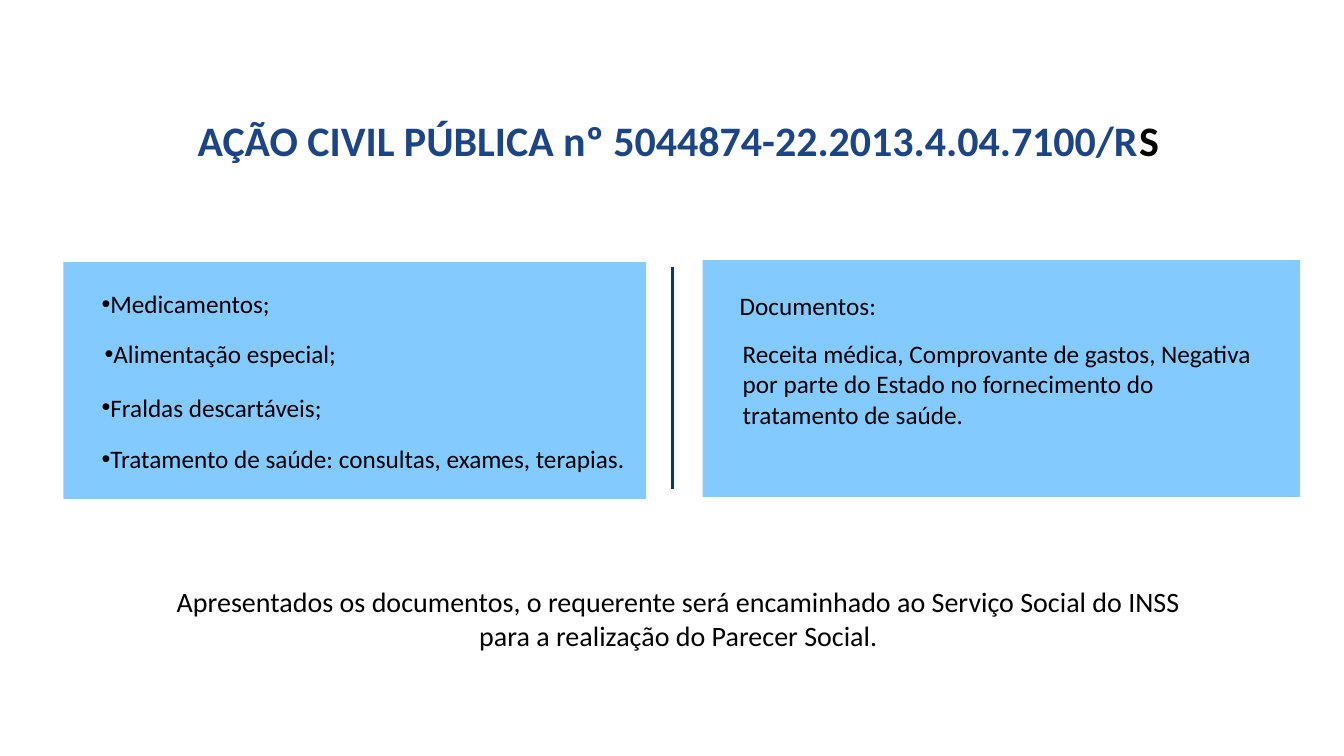
"""Build the slide on the documents required by the public civil action."""
from dataclasses import dataclass

from lxml.etree import SubElement
from pptx import Presentation
from pptx.dml.color import RGBColor
from pptx.enum.shapes import MSO_CONNECTOR, MSO_SHAPE
from pptx.enum.text import MSO_ANCHOR, PP_ALIGN
from pptx.oxml.ns import qn
from pptx.slide import Slide
from pptx.util import Pt

BLACK = RGBColor(0x00, 0x00, 0x00)
TITLE_BLUE = RGBColor(0x1C, 0x45, 0x87)
PANEL_BLUE = RGBColor(0x83, 0xCA, 0xFF)
DIVIDER_BLUE = RGBColor(0x00, 0x3F, 0x6A)
FONT_NAME = "Calibri"


@dataclass(frozen=True)
class Area:
    """Place and size in points."""
    left: float
    top: float
    width: float
    height: float


@dataclass(frozen=True)
class Span:
    """Run of text with its colour."""
    text: str
    color: RGBColor = BLACK


@dataclass(frozen=True)
class TextBlock:
    """Text box holding one paragraph."""
    area: Area
    spans: tuple[Span, ...]
    size: float = 18
    bold: bool = False
    bullet: bool = False
    align: PP_ALIGN = PP_ALIGN.LEFT
    anchor: MSO_ANCHOR = MSO_ANCHOR.TOP


PANELS = (Area(45.36, 187.2, 416.16, 169.2), Area(501.84, 185.76, 426.96, 169.2))

BENEFITS = (
    (65.52, 202.32, "Medicamentos;"),
    (67.68, 238.32, "Alimentação especial;"),
    (65.52, 276.48, "Fraldas descartáveis;"),
    (65.52, 313.2, "Tratamento de saúde: consultas, exames, terapias."),
)

TEXT_BLOCKS = (
    TextBlock(
        Area(65.52, 78.48, 838.08, 43.2),
        (Span("AÇÃO CIVIL PÚBLICA nº 5044874-22.2013.4.04.7100/R", TITLE_BLUE), Span("S")),
        size=30, bold=True, align=PP_ALIGN.CENTER, anchor=MSO_ANCHOR.MIDDLE,
    ),
    *(
        TextBlock(Area(left, top, 424.8, 28.8), (Span(text),), bullet=True)
        for left, top, text in BENEFITS
    ),
    TextBlock(Area(521.28, 203.76, 424.8, 28.8), (Span("Documentos:"),)),
    TextBlock(
        Area(523.44, 238.32, 383.04, 72),
        (Span("Receita médica, Comprovante de gastos, Negativa por parte do Estado "
              "no fornecimento do tratamento de saúde."),),
    ),
    TextBlock(
        Area(103.68, 414, 761.76, 55.44),
        (Span("Apresentados os documentos, o requerente será encaminhado ao Serviço Social "
              "do INSS para a realização do Parecer Social."),),
        size=20, align=PP_ALIGN.CENTER,
    ),
)


def add_panel(page: Slide, area: Area) -> None:
    """Draw a plain filled panel."""
    panel = page.shapes.add_shape(
        MSO_SHAPE.RECTANGLE, Pt(area.left), Pt(area.top), Pt(area.width), Pt(area.height)
    )
    panel.shadow.inherit = False
    panel.fill.solid()
    panel.fill.fore_color.rgb = PANEL_BLUE
    panel.line.fill.background()


def add_divider(page: Slide, center: float, top: float, bottom: float) -> None:
    """Draw the vertical line between the panels."""
    divider = page.shapes.add_connector(
        MSO_CONNECTOR.STRAIGHT, Pt(center), Pt(top), Pt(center), Pt(bottom)
    )
    divider.line.color.rgb = DIVIDER_BLUE
    divider.line.width = Pt(2.25)
    SubElement(divider._element.spPr, qn("a:effectLst"))


def add_text(page: Slide, block: TextBlock) -> None:
    """Draw a text block run by run."""
    area = block.area
    box = page.shapes.add_textbox(
        Pt(area.left), Pt(area.top), Pt(area.width), Pt(area.height)
    )
    frame = box.text_frame
    frame.word_wrap = True
    frame.vertical_anchor = block.anchor
    para = frame.paragraphs[0]
    para.alignment = block.align
    if block.bullet:
        properties = para._p.get_or_add_pPr()
        SubElement(properties, qn("a:buFont"), typeface="Arial")
        SubElement(properties, qn("a:buChar"), char="•")
    for span in block.spans:
        run = para.add_run()
        run.text = span.text
        run.font.name = FONT_NAME
        run.font.size = Pt(block.size)
        run.font.bold = block.bold
        run.font.color.rgb = span.color


def main() -> None:
    """Build and save the deck."""
    deck = Presentation()
    deck.slide_width, deck.slide_height = Pt(960), Pt(540)
    page = deck.slides.add_slide(deck.slide_layouts[6])
    for area in PANELS:
        add_panel(page, area)
    add_divider(page, 480.24, 190.8, 349.2)
    for block in TEXT_BLOCKS:
        add_text(page, block)
    deck.save("out.pptx")


if __name__ == "__main__":
    main()
